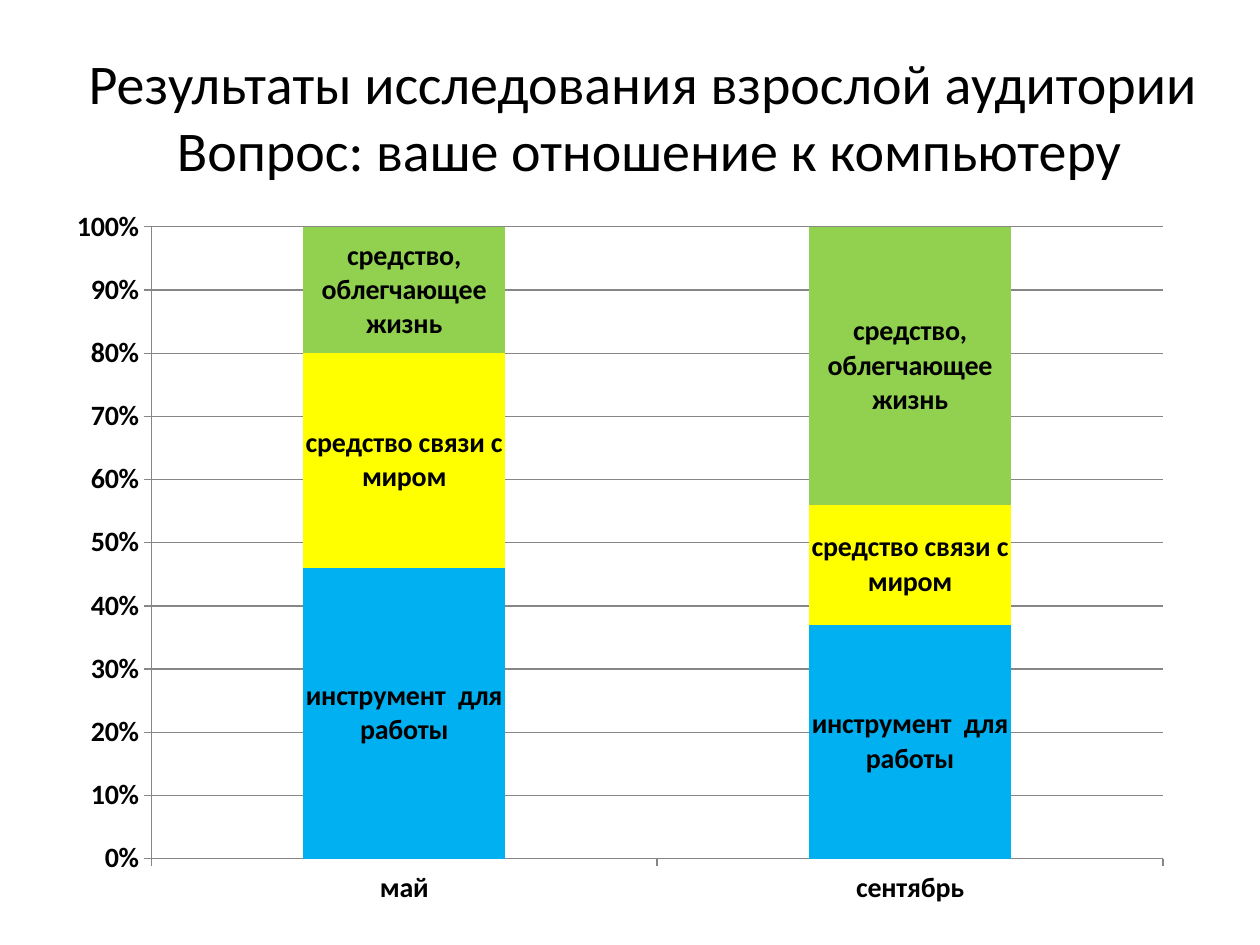
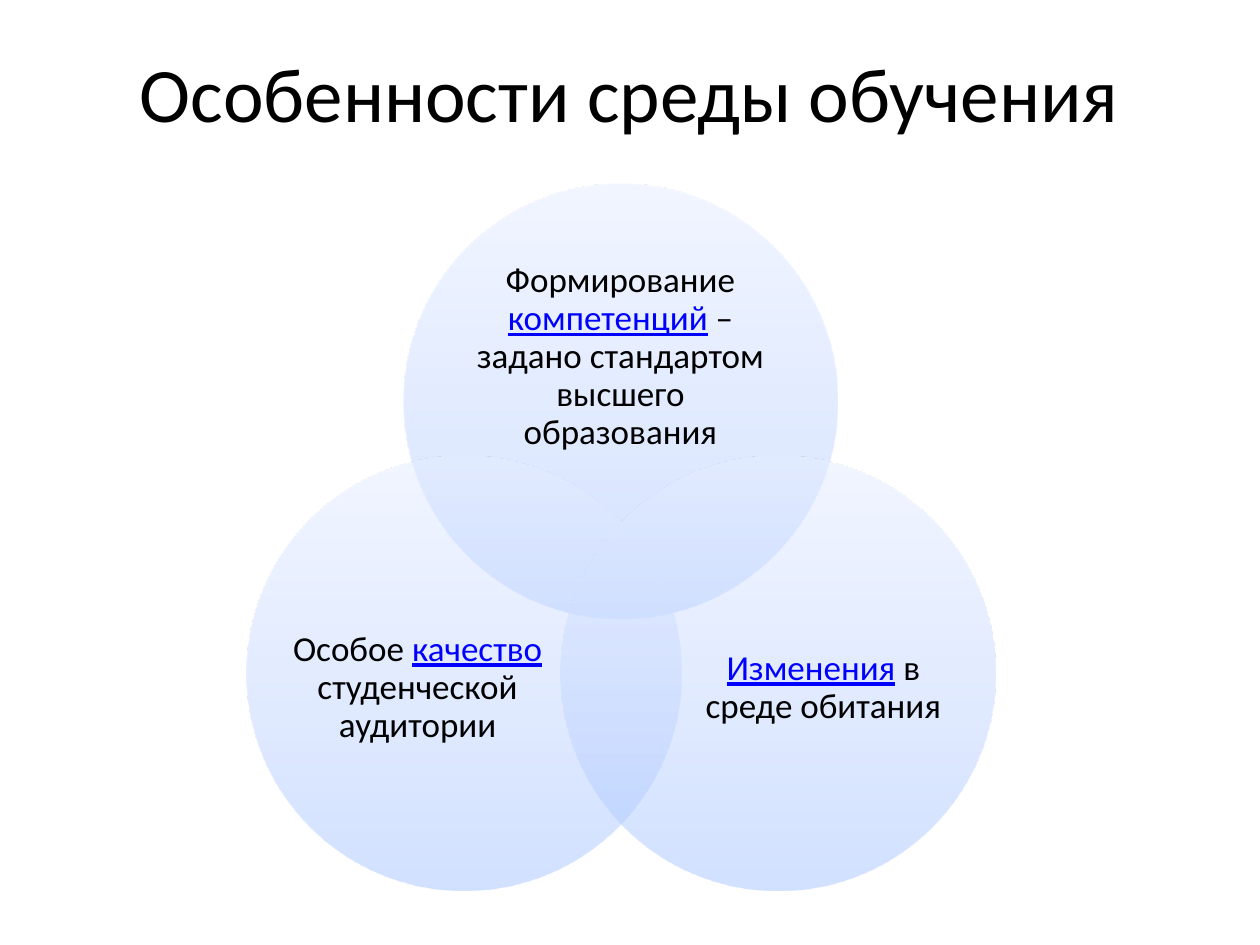
from lxml.etree import SubElement
from pptx import Presentation
from pptx.chart.data import CategoryChartData
from pptx.dml.color import RGBColor
from pptx.enum.chart import XL_CHART_TYPE as ChartType, XL_LABEL_POSITION as LabelPosition
from pptx.enum.chart import XL_TICK_MARK as TickMark
from pptx.enum.shapes import MSO_SHAPE as Shape
from pptx.enum.text import MSO_ANCHOR as Anchor, PP_ALIGN as Align
from pptx.oxml.ns import qn
from pptx.util import Inches, Pt

FONT = "Calibri"
BLACK, LINK_BLUE, AXIS_GREY = "000000", "0000FF", "868686"
CIRCLE_GRADIENT = [(0, "A4C4FF"), (35, "BFD4FF"), (100, "E6EEFF")]
CIRCLE_SIZE = 3.45


def color(hex_string):
    return RGBColor.from_string(hex_string)


def add_text(slide, box, lines, size, margin=0.0, line_spacing=1.0):
    """Add a centred text box; each line is a list of (text, is_link) runs."""
    frame = slide.shapes.add_textbox(*map(Inches, box)).text_frame
    format_values = {"word_wrap": True, "vertical_anchor": Anchor.MIDDLE,
                     "margin_left": Inches(margin), "margin_right": Inches(margin),
                     "margin_top": Inches(margin / 2), "margin_bottom": Inches(margin / 2)}
    for name, value in format_values.items():
        setattr(frame, name, value)
    paragraph = frame.paragraphs[0]
    paragraph.alignment = Align.CENTER
    paragraph.line_spacing = line_spacing
    for index, line in enumerate(lines):
        if index:
            paragraph.add_line_break()
        for text, is_link in line:
            run = paragraph.add_run()
            run.text = text
            run.font.name, run.font.size = FONT, Pt(size)
            run.font.underline = is_link
            run.font.color.rgb = color(LINK_BLUE if is_link else BLACK)


presentation = Presentation()
presentation.slide_width, presentation.slide_height = Inches(10), Inches(7.5)
blank_layout = presentation.slide_layouts[6]

# Slide 1: survey results
slide = presentation.slides.add_slide(blank_layout)
add_text(slide, (0.43, 0.29, 9.45, 1.25),
         [[("Результаты исследования взрослой аудитории ", False)],
          [("Вопрос: ваше отношение к компьютеру", False)]], 32, margin=0.1)

attitudes = [
    ("инструмент  для работы", (46, 37), "00B0F0"),
    ("средство связи с миром", (34, 19), "FFFF00"),
    ("средство, облегчающее жизнь", (20, 44), "92D050"),
]
chart_data = CategoryChartData()
chart_data.categories = ["май", "сентябрь"]
for name, values, _ in attitudes:
    chart_data.add_series(name, values)
chart = slide.shapes.add_chart(
    ChartType.COLUMN_STACKED_100, Inches(0.43), Inches(1.55), Inches(8.98), Inches(5.75),
    chart_data).chart
chart.has_title = chart.has_legend = False
chart.font.name, chart.font.size, chart.font.bold = FONT, Pt(16), True
chart.font.color.rgb = color(BLACK)

plot = chart.plots[0]
plot.gap_width, plot.overlap, plot.vary_by_categories = 150, 100, False
for series, (_, _, fill_color) in zip(plot.series, attitudes):
    series.format.fill.solid()
    series.format.fill.fore_color.rgb = color(fill_color)
    labels = series.data_labels
    labels.show_series_name, labels.show_value = True, False
    labels.position = LabelPosition.CENTER

value_axis, category_axis = chart.value_axis, chart.category_axis
value_axis.has_major_gridlines = True
value_axis.tick_labels.number_format = "0%"
value_axis.tick_labels.number_format_is_linked = False
for axis in (value_axis, category_axis):
    axis.major_tick_mark, axis.minor_tick_mark = TickMark.OUTSIDE, TickMark.NONE
for lined in (value_axis, category_axis, value_axis.major_gridlines):
    lined.format.line.color.rgb = color(AXIS_GREY)
    lined.format.line.width = Pt(0.75)

# Slide 2: three overlapping circles
slide = presentation.slides.add_slide(blank_layout)
add_text(slide, (0.5, 0.3, 9, 0.85), [[("Особенности среды обучения", False)]], 44, margin=0.1)

features = [
    ((3.2, 1.46), (3.66, 2.06, 2.53, 1.55),
     [("Формирование ", False), ("компетенций", True),
      (" – задано стандартом высшего образования", False)]),
    ((4.45, 3.62), (5.5, 4.51, 2.07, 1.9),
     [("Изменения", True), (" в среде обитания", False)]),
    ((1.96, 3.62), (2.28, 4.51, 2.07, 1.9),
     [("Особое ", False), ("качество", True), (" студенческой аудитории", False)]),
]
for (left, top), text_box, runs in features:
    circle = slide.shapes.add_shape(Shape.OVAL, Inches(left), Inches(top),
                                    Inches(CIRCLE_SIZE), Inches(CIRCLE_SIZE))
    circle.shadow.inherit = False
    circle.line.fill.background()
    circle.fill.gradient()
    circle.fill.gradient_angle = 90
    stops = circle.element.spPr.find(".//" + qn("a:gsLst"))
    for old_stop in list(stops):
        stops.remove(old_stop)
    for position, stop_color in CIRCLE_GRADIENT:
        stop = SubElement(stops, qn("a:gs"), pos=str(position * 1000))
        rgb = SubElement(stop, qn("a:srgbClr"), val=stop_color)
        SubElement(rgb, qn("a:alpha"), val="50000")
    add_text(slide, text_box, [runs], 20, line_spacing=0.9)

presentation.save("out.pptx")
